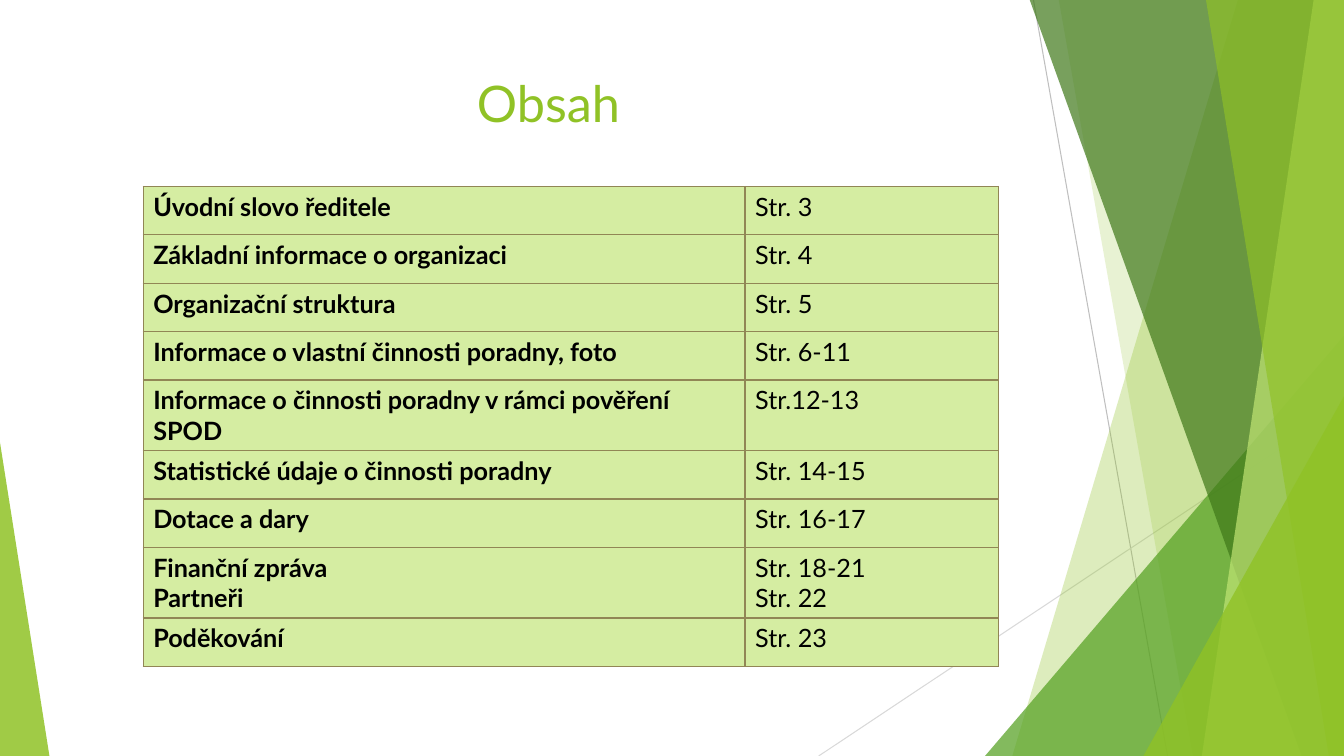
from pptx import Presentation
from pptx import util as u
from pptx.dml.color import RGBColor
from pptx.enum import shapes, text
from pptx.oxml import xmlchemy

WIDTH, HEIGHT = 13.33, 7.5
BAND_TOP = -0.01

LIME = RGBColor(0x90, 0xC2, 0x26)
PALE_LIME = RGBColor(0xC0, 0xE4, 0x74)
GREEN = RGBColor(0x54, 0xA0, 0x21)
DARK_GREEN = RGBColor(0x3F, 0x78, 0x19)
CELL_GREEN = RGBColor(0xD5, 0xED, 0xA2)
BORDER = RGBColor(0x91, 0x86, 0x55)
GREY = RGBColor(0xBF, 0xBF, 0xBF)
LIGHT_GREY = RGBColor(0xD9, 0xD9, 0xD9)
BLACK = RGBColor(0, 0, 0)

CONTENTS = [
    ("Úvodní slovo ředitele", "Str. 3"),
    ("Základní informace o organizaci", "Str. 4"),
    ("Organizační struktura", "Str. 5"),
    ("Informace o vlastní činnosti poradny, foto", "Str. 6-11"),
    ("Informace o činnosti poradny v rámci pověření SPOD", "Str.12-13"),
    ("Statistické údaje o činnosti poradny", "Str. 14-15"),
    ("Dotace a dary", "Str. 16-17"),
    ("Finanční zpráva\nPartneři", "Str. 18-21\nStr. 22"),
    ("Poděkování", "Str. 23"),
]
COLUMN_WIDTHS = (5.97, 2.51)
ROW_HEIGHT = 0.48
TALL_ROWS = {4: 0.64, 7: 0.49}


class ContentsSlide:
    font_name = "Lato"

    def __init__(self, deck):
        self.slide = deck.slides.add_slide(deck.slide_layouts[6])
        self.shapes = self.slide.shapes

    def set_wording(self, frame, wording, size, color, bold=False,
                    align=text.PP_ALIGN.LEFT):
        frame.text = wording
        font_format = {"name": self.font_name, "size": u.Pt(size), "bold": bold}
        for paragraph in frame.paragraphs:
            paragraph.alignment = align
            for run in paragraph.runs:
                for name, value in font_format.items():
                    setattr(run.font, name, value)
                run.font.color.rgb = color

    def paint(self, facet, color, opacity):
        """Fill a borderless facet; opacity is a percentage."""
        facet.shadow.inherit = False
        facet.fill.solid()
        facet.fill.fore_color.rgb = color
        facet.line.fill.background()
        tone = facet.element.xpath("./p:spPr/a:solidFill/a:srgbClr")[0]
        alpha = xmlchemy.OxmlElement("a:alpha")
        alpha.set("val", str(opacity * 1000))
        tone.append(alpha)

    def hairline(self, start, end, color):
        ends = [u.Inches(length) for length in (*start, *end)]
        line = self.shapes.add_connector(shapes.MSO_CONNECTOR.STRAIGHT, *ends)
        line.line.color.rgb = color
        line.line.width = u.Pt(0.75)
        line.element.spPr.append(xmlchemy.OxmlElement("a:effectLst"))

    def band(self, top_x, bottom_x, color, opacity):
        """Draw a full-height band from a slanted left edge to the slide's right edge."""
        corners = [(u.Inches(x), u.Inches(y)) for x, y in (
            (top_x, BAND_TOP), (WIDTH, BAND_TOP), (WIDTH, HEIGHT), (bottom_x, HEIGHT))]
        outline = self.shapes.build_freeform(*corners[0])
        outline.add_line_segments(corners[1:], close=True)
        self.paint(outline.convert_to_shape(), color, opacity)

    def corner_triangle(self, left, width, height, apex, color, opacity):
        """Draw a triangle standing on the slide's bottom edge."""
        triangle = self.shapes.add_shape(
            shapes.MSO_SHAPE.ISOSCELES_TRIANGLE, u.Inches(left),
            u.Inches(HEIGHT - height), u.Inches(width), u.Inches(height))
        triangle.adjustments[0] = apex
        self.paint(triangle, color, opacity)

    def title(self, wording):
        heading = self.shapes.add_textbox(
            u.Inches(0.74), u.Inches(0.67), u.Inches(9.4), u.Inches(1.44))
        frame_format = {"word_wrap": True, "vertical_anchor": text.MSO_ANCHOR.TOP}
        for name, value in frame_format.items():
            setattr(heading.text_frame, name, value)
        self.set_wording(heading.text_frame, wording, 36, LIME,
                         align=text.PP_ALIGN.CENTER)

    def border(self, cell):
        properties = cell._tc.get_or_add_tcPr()
        for index, side in enumerate(("a:lnL", "a:lnR", "a:lnT", "a:lnB")):
            edge = xmlchemy.OxmlElement(side)
            edge.set("w", str(u.Pt(1)))
            fill = xmlchemy.OxmlElement("a:solidFill")
            tone = xmlchemy.OxmlElement("a:srgbClr")
            tone.set("val", str(BORDER))
            fill.append(tone)
            edge.append(fill)
            properties.insert(index, edge)

    def contents_table(self, entries):
        heights = [TALL_ROWS.get(row, ROW_HEIGHT) for row in range(len(entries))]
        table = self.shapes.add_table(
            len(entries), len(COLUMN_WIDTHS), u.Inches(1.42), u.Inches(1.85),
            u.Inches(sum(COLUMN_WIDTHS)), u.Inches(sum(heights))).table
        for name, value in {"first_row": False, "horz_banding": False}.items():
            setattr(table, name, value)
        for column, width in zip(table.columns, COLUMN_WIDTHS):
            column.width = u.Inches(width)
        for row, height, entry in zip(table.rows, heights, entries):
            row.height = u.Inches(height)
            for position, (cell, wording) in enumerate(zip(row.cells, entry)):
                self.set_wording(cell.text_frame, wording, 18, BLACK, bold=position == 0)
                cell.fill.solid()
                cell.fill.fore_color.rgb = CELL_GREEN
                self.border(cell)


def main():
    deck = Presentation()
    deck.slide_width, deck.slide_height = u.Inches(WIDTH), u.Inches(HEIGHT)
    page = ContentsSlide(deck)

    page.hairline((10.25, 0), (11.58, HEIGHT), GREY)
    page.hairline((WIDTH, 4.03), (8.12, HEIGHT), LIGHT_GREY)
    page.band(12.28, 10.04, LIME, 30)
    page.band(10.5, 11.83, LIME, 20)
    page.corner_triangle(9.77, 3.56, 4.17, 1, GREEN, 72)
    page.band(10.21, 12.91, DARK_GREEN, 70)
    page.band(13.03, 11.92, PALE_LIME, 70)
    page.band(11.96, 13.18, LIME, 65)
    page.corner_triangle(11.34, 1.99, 3.57, 1, LIME, 80)
    page.corner_triangle(0, 0.49, 3.11, 0, LIME, 85)

    page.title("Obsah")
    page.contents_table(CONTENTS)
    deck.save("out.pptx")


if __name__ == "__main__":
    main()
